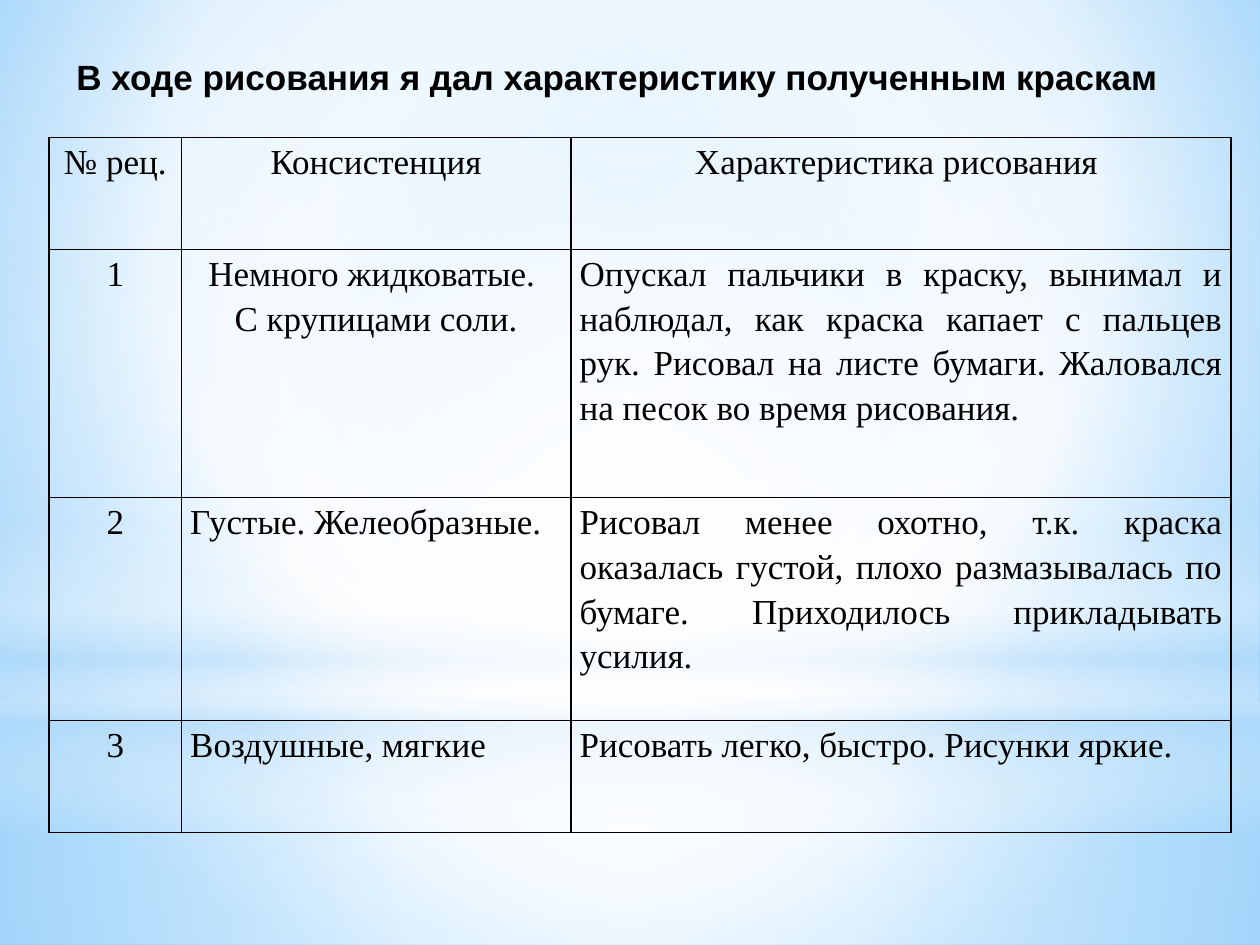
"""Build a slide with a table that describes home-made paints."""
import lxml.etree
import pptx
import pptx.dml.color
import pptx.enum.shapes
import pptx.enum.text
import pptx.oxml.ns
import pptx.util

Inches = pptx.util.Inches
SHAPE = pptx.enum.shapes.MSO_SHAPE
ALIGN = pptx.enum.text.PP_ALIGN
NS = "http://schemas.openxmlformats.org/drawingml/2006/main"

COLORS = {"text": "000000", "border": "000000", "white": "FFFFFF",
          "haze": "B4DCFA", "sky": "9ED5FF", "edge": "5BB9FF"}

CENTER = (50, 50, 50, 50)
BACKGROUND = [(0, "sky", 100), (60, "white", 100), (100, "edge", 100)]
LAYERS = [
    (SHAPE.RECTANGLE, 5.58, 1.92, CENTER,
     [(0, "white", 91), (37, "white", 76), (100, "haze", 79)]),
    (SHAPE.RECTANGLE, 0, 5.58, CENTER,
     [(0, "white", 89), (48, "white", 62), (100, "haze", 79)]),
    (SHAPE.RECTANGLE, 4.12, 2.5, None,
     [(0, "white", 0), (29, "white", 30), (45, "haze", 40),
      (55, "white", 26), (65, "haze", 60), (100, "white", 0)]),
    (SHAPE.OVAL, 1.75, 5.58, CENTER, [(0, "white", 100), (56, "white", 0)]),
]

TITLE = "В ходе рисования я дал характеристику полученным краскам"
COL_WIDTHS = [1.05, 3.09, 5.24]
ROW_HEIGHTS = [0.89, 1.97, 1.77, 0.89]
C, J = ALIGN.CENTER, ALIGN.JUSTIFY
ROWS = [
    [(C, ["№ рец."]), (C, ["Консистенция"]), (C, ["Характеристика рисования "])],
    [(C, ["1"]), (C, ["Немного жидковатые. ", "С крупицами соли."]),
     (J, ["Опускал пальчики в краску, вынимал и наблюдал, как краска капает "
          "с пальцев рук. Рисовал на листе бумаги. Жаловался на песок во "
          "время рисования."])],
    [(C, ["2"]), (J, ["Густые. Желеобразные."]),
     (J, ["Рисовал менее охотно, т.к. краска оказалась густой, плохо "
          "размазывалась по бумаге. Приходилось прикладывать усилия."])],
    [(C, ["3"]), (J, ["Воздушные, мягкие"]),
     (J, ["Рисовать легко, быстро. Рисунки яркие. "])],
]


def set_gradient(fill, parent, stops, focus):
    """Fill with a gradient, circular around focus or running downwards."""
    fill.solid()
    old = parent.find(".//" + pptx.oxml.ns.qn("a:solidFill"))
    gs = "".join(
        f'<a:gs pos="{pos * 1000}"><a:srgbClr val="{COLORS[name]}">'
        f'<a:alpha val="{alpha * 1000}"/></a:srgbClr></a:gs>'
        for pos, name, alpha in stops)
    if focus:
        sides = " ".join(f'{s}="{v * 1000}"' for s, v in zip("ltrb", focus))
        shade = f'<a:path path="circle"><a:fillToRect {sides}/></a:path>'
    else:
        shade = '<a:lin ang="5400000" scaled="0"/>'
    grad = pptx.oxml.parse_xml(
        f'<a:gradFill xmlns:a="{NS}" rotWithShape="1">'
        f'<a:gsLst>{gs}</a:gsLst>{shade}</a:gradFill>')
    old.getparent().replace(old, grad)


def add_layer(slide, kind, top, height, focus, stops):
    """Add a full-width translucent layer of the backdrop."""
    sp = slide.shapes.add_shape(kind, 0, Inches(top), Inches(10), Inches(height))
    sp.shadow.inherit = False
    sp.line.fill.background()
    set_gradient(sp.fill, sp._element.spPr, stops, focus)


def add_run(p, text, font, bold=False):
    """Add a 20 pt run to a paragraph."""
    r = p.add_run()
    r.text = text
    r.font.name = font
    r.font.size = pptx.util.Pt(20)
    r.font.bold = bold
    r.font.color.rgb = pptx.dml.color.RGBColor.from_string(COLORS["text"])


def add_title(slide):
    """Add the centred title."""
    sp = slide.shapes.add_textbox(0, Inches(0.39), Inches(9.8), Inches(0.44))
    tf = sp.text_frame
    tf.word_wrap = True
    p = tf.paragraphs[0]
    p.alignment = C
    add_run(p, TITLE, "Arial", bold=True)


def set_borders(cell):
    """Draw a 1 pt line on all four sides of a cell."""
    tc_pr = cell._tc.get_or_add_tcPr()
    for i, side in enumerate("LRTB"):
        tc_pr.insert(i, pptx.oxml.parse_xml(
            f'<a:ln{side} xmlns:a="{NS}" w="12700"><a:solidFill>'
            f'<a:srgbClr val="{COLORS["border"]}"/></a:solidFill></a:ln{side}>'))


def fill_cell(cell, align, lines):
    """Write a cell's paragraphs and set its margins, fill and borders."""
    cell.margin_left = cell.margin_right = Inches(0.07)
    cell.margin_top = cell.margin_bottom = 0
    cell.fill.background()
    set_borders(cell)
    tf = cell.text_frame
    for i, line in enumerate(lines):
        p = tf.add_paragraph() if i else tf.paragraphs[0]
        p.alignment = align
        p.line_spacing = 1.15
        add_run(p, line, "Times New Roman")


def add_paint_table(slide):
    """Add the table of paint recipes."""
    table = slide.shapes.add_table(
        len(ROWS), len(COL_WIDTHS), Inches(0.39), Inches(1.09),
        Inches(sum(COL_WIDTHS)), Inches(sum(ROW_HEIGHTS))).table
    table.first_row = table.horz_banding = False
    for column, width in zip(table.columns, COL_WIDTHS):
        column.width = Inches(width)
    for row, height, contents in zip(table.rows, ROW_HEIGHTS, ROWS):
        row.height = Inches(height)
        for cell, (align, lines) in zip(row.cells, contents):
            fill_cell(cell, align, lines)


def main():
    """Build and save the slide."""
    prs = pptx.Presentation()
    prs.slide_width, prs.slide_height = Inches(10), Inches(7.5)
    slide = prs.slides.add_slide(prs.slide_layouts[6])
    set_gradient(slide.background.fill, slide._element, BACKGROUND,
                 (20, 10, 20, 60))
    for layer in LAYERS:
        add_layer(slide, *layer)
    add_title(slide)
    add_paint_table(slide)
    prs.save("out.pptx")


main()
